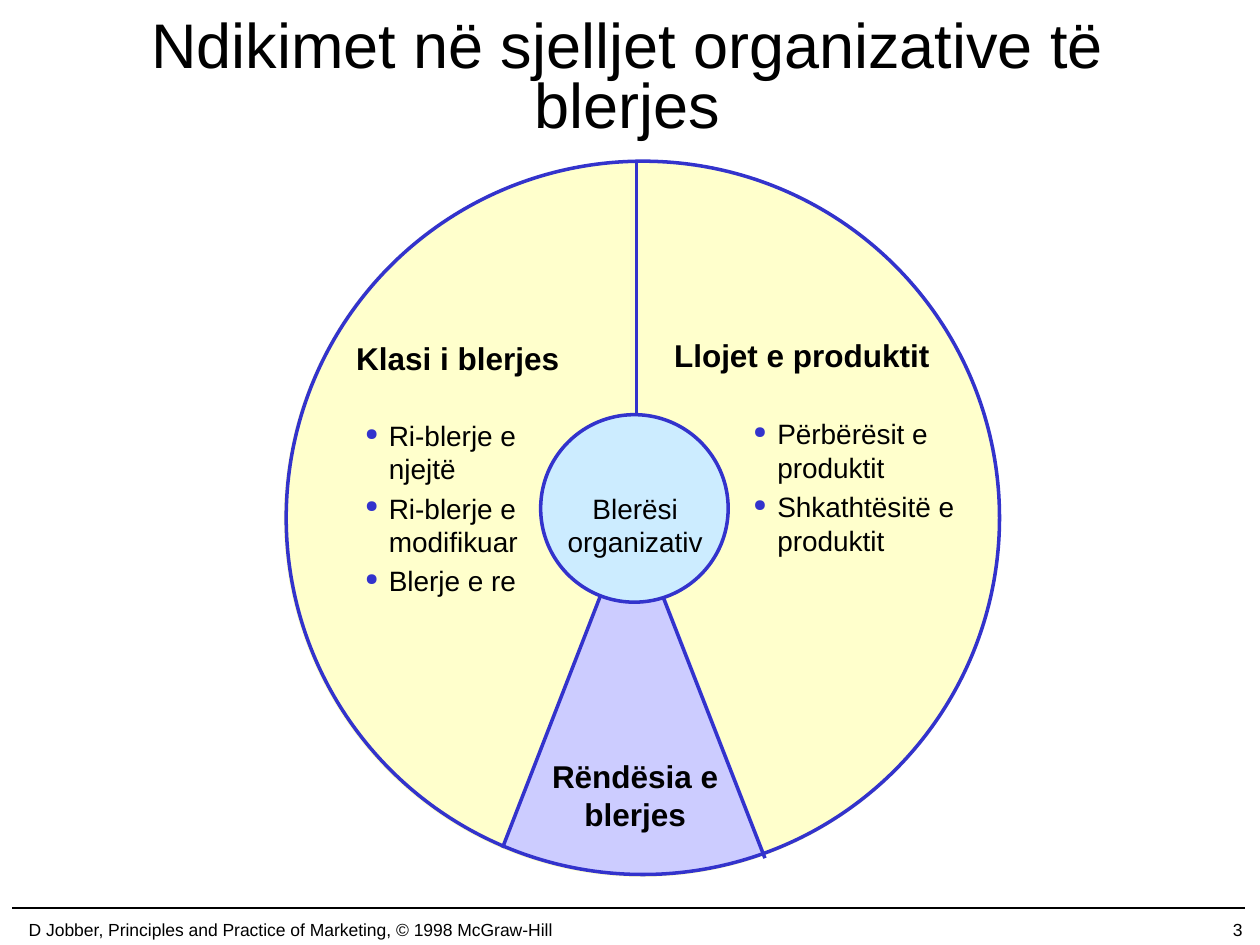
from math import cos, radians, sin

from lxml.etree import SubElement
from pptx import Presentation
from pptx.dml.color import RGBColor
from pptx.enum.shapes import MSO_CONNECTOR, MSO_SHAPE
from pptx.enum.text import MSO_ANCHOR, MSO_AUTO_SIZE, PP_ALIGN
from pptx.oxml.ns import qn
from pptx.util import Cm, Pt

BLACK = RGBColor(0x00, 0x00, 0x00)
BLUE = RGBColor(0x33, 0x33, 0xCC)
YELLOW = RGBColor(0xFF, 0xFF, 0xCC)
LILAC = RGBColor(0xCC, 0xCC, 0xFF)
SKY = RGBColor(0xCC, 0xEC, 0xFF)

HEADING = {"size": Pt(18), "bold": True}
BODY = {"size": Pt(16)}
SMALL = {"size": Pt(10)}


class SlidePainter:
    """Draws styled elements on the current slide."""

    font_name = "Arial"
    line_width = Pt(2)

    def __init__(self, page):
        self.page = page

    def format_text(self, para, font, layout):
        for name, value in layout.items():
            setattr(para, name, value)
        for name, value in {"name": self.font_name, **font}.items():
            setattr(para.font, name, value)
        para.font.color.rgb = BLACK

    def title(self, text, place):
        box = self.page.shapes.title
        for name, value in zip(("left", "top", "width", "height"), place):
            setattr(box, name, Cm(value))
        frame = box.text_frame
        frame.text = text
        frame.auto_size = MSO_AUTO_SIZE.NONE
        frame.vertical_anchor = MSO_ANCHOR.MIDDLE
        layout = {"alignment": PP_ALIGN.CENTER, "line_spacing": 0.8}
        self.format_text(frame.paragraphs[0], {"size": Pt(36)}, layout)

    def text(self, lines, place, font, align=PP_ALIGN.LEFT, bullets=False, **frame_format):
        box = self.page.shapes.add_textbox(*map(Cm, place))
        frame = box.text_frame
        for name, value in {"word_wrap": True, **frame_format}.items():
            setattr(frame, name, value)
        for index, line in enumerate(lines):
            para = frame.add_paragraph() if index else frame.paragraphs[0]
            para.text = line
            if bullets:
                self.bullet(para)
            layout = {"alignment": align, "space_before": Pt(3.2 if index else 0)}
            self.format_text(para, font, layout)

    def bullet(self, para):
        properties = para._p.get_or_add_pPr()
        properties.set("marL", str(Cm(0.48)))
        properties.set("indent", str(-Cm(0.48)))
        color = SubElement(properties, qn("a:buClr"))
        SubElement(color, qn("a:srgbClr"), val=str(BLUE))
        SubElement(properties, qn("a:buSzPct"), val="60000")
        SubElement(properties, qn("a:buChar"), char="●")

    def paint(self, shape, fill, outlined):
        shape.shadow.inherit = False
        if fill is None:
            shape.fill.background()
        else:
            shape.fill.solid()
            shape.fill.fore_color.rgb = fill
        if outlined:
            shape.line.color.rgb = BLUE
            shape.line.width = self.line_width
        else:
            shape.line.fill.background()

    def circle(self, left, top, size, fill=None, outlined=True):
        shape = self.page.shapes.add_shape(
            MSO_SHAPE.OVAL, Cm(left), Cm(top), Cm(size), Cm(size))
        self.paint(shape, fill, outlined)

    def wedge(self, tip, center, radius, angles, fill):
        arc = [(Cm(center[0] + radius * cos(radians(angle))),
                Cm(center[1] + radius * sin(radians(angle)))) for angle in angles]
        builder = self.page.shapes.build_freeform(*map(Cm, tip))
        builder.add_line_segments(arc, close=True)
        self.paint(builder.convert_to_shape(), fill, False)

    def line(self, start, end, color=BLUE, width=line_width):
        connector = self.page.shapes.add_connector(
            MSO_CONNECTOR.STRAIGHT, *map(Cm, start + end))
        connector.line.color.rgb = color
        connector.line.width = width
        SubElement(connector._element.spPr, qn("a:effectLst"))


def main():
    deck = Presentation()
    deck.slide_width, deck.slide_height = Cm(25.4), Cm(19.05)
    painter = SlidePainter(deck.slides.add_slide(deck.slide_layouts[5]))

    painter.title("Ndikimet në sjelljet organizative të blerjes", (1.85, 0.03, 21.59, 3.18))
    painter.line((0.25, 18.31), (25.1, 18.31), BLACK, Pt(1))
    footer = {"word_wrap": False, "vertical_anchor": MSO_ANCHOR.MIDDLE}
    painter.text(["D Jobber, Principles and Practice of Marketing, © 1998 McGraw-Hill"],
                 (0, 18.42, 11.71, 0.64), SMALL, PP_ALIGN.CENTER, **footer)
    painter.text(["3"], (20.02, 18.42, 5.28, 0.64), SMALL, PP_ALIGN.RIGHT, **footer)

    painter.circle(5.72, 3.23, 14.45, YELLOW, outlined=False)
    painter.wedge((12.78, 10.41), (12.96, 10.44), 7.19, range(70, 114), LILAC)
    for start, end in (
        ((12.83, 9.04), (12.83, 3.23)),
        ((15.42, 17.3), (13.26, 11.76)),
        ((10.13, 17.09), (12.19, 11.79)),
    ):
        painter.line(start, end)
    painter.circle(10.9, 8.36, 3.78, SKY)
    painter.circle(5.77, 3.25, 14.38)

    painter.text(["Klasi i blerjes"], (6.93, 6.71, 5.13, 1.02), HEADING)
    painter.text(["Ri-blerje e njejtë", "Ri-blerje e modifikuar", "Blerje e re"],
                 (7.11, 8.31, 3.84, 4.39), BODY, bullets=True)
    painter.text(["Llojet e produktit"], (13.34, 6.65, 6.2, 1.02), HEADING)
    painter.text(["Përbërësit e produktit", "Shkathtësitë e produktit"],
                 (14.94, 8.28, 4.95, 4.01), BODY, bullets=True)
    painter.text(["Blerësi organizativ"], (10.62, 9.78, 4.37, 1.63), BODY, PP_ALIGN.CENTER)
    painter.text(["Rëndësia e blerjes"], (10.57, 15.14, 4.47, 1.78), HEADING, PP_ALIGN.CENTER)

    deck.save("out.pptx")


if __name__ == "__main__":
    main()
